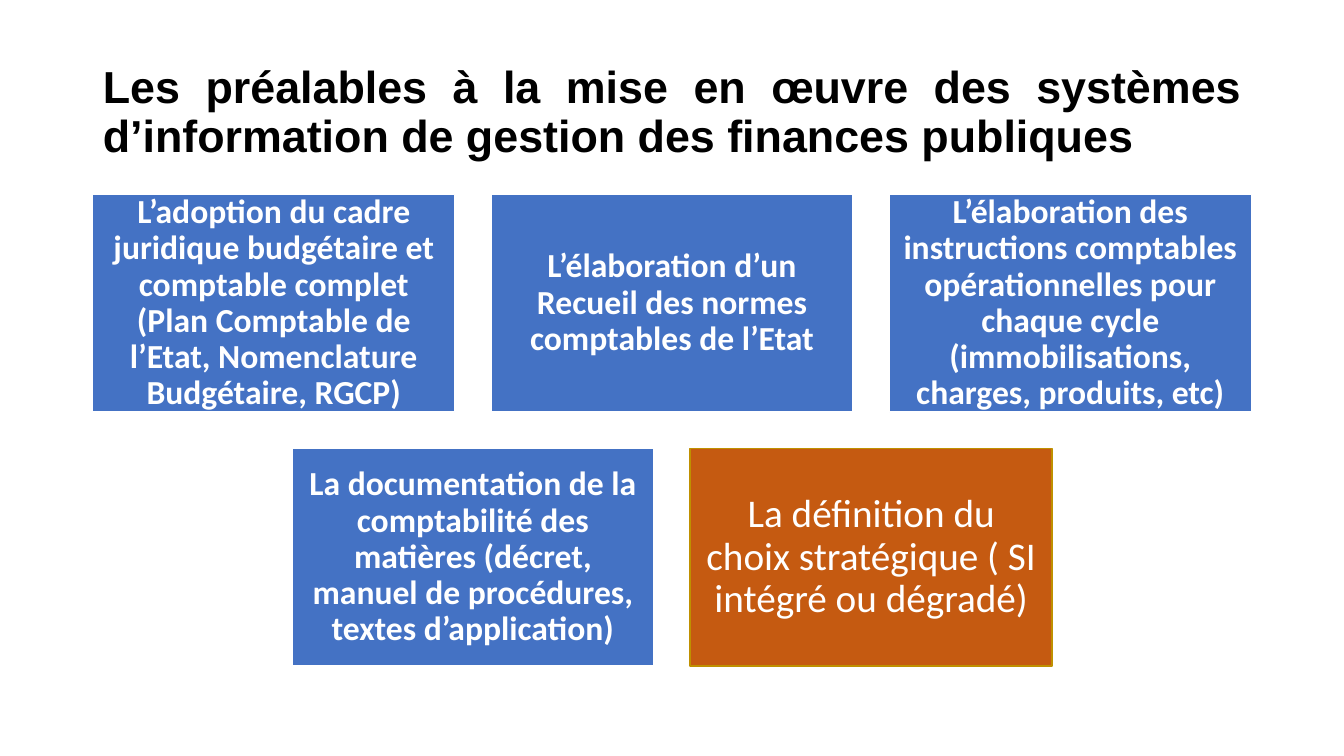
from pptx import Presentation
from pptx.dml.color import RGBColor
from pptx.enum.shapes import MSO_SHAPE as Shape
from pptx.enum.text import MSO_ANCHOR as Anchor, MSO_AUTO_SIZE as AutoSize, PP_ALIGN as Align
from pptx.util import Inches, Pt

BLACK = RGBColor(0x00, 0x00, 0x00)
WHITE = RGBColor(0xFF, 0xFF, 0xFF)
BLUE = RGBColor(0x44, 0x72, 0xC4)
ORANGE = RGBColor(0xC5, 0x5A, 0x11)
GOLD = RGBColor(0xBF, 0x90, 0x00)

SLIDE_WIDTH, SLIDE_HEIGHT = 13.33, 7.5
BOX_WIDTH, BOX_HEIGHT, GAP = 3.59, 2.16, 0.36
FIRST_ROW_TOP = 1.93

TITLE = ("Les préalables à la mise en œuvre des systèmes "
         "d’information de gestion des finances publiques")

STEP = dict(fill=BLUE, line=WHITE, inset=0.1, size=24, bold=True)
CHOICE = dict(fill=ORANGE, line=GOLD, inset=0.12, size=28, bold=False)

ROWS = [
    [("L’adoption du cadre juridique budgétaire et comptable complet "
      "(Plan Comptable de l’Etat, Nomenclature Budgétaire, RGCP)", STEP),
     ("L’élaboration d’un Recueil des normes comptables de l’Etat", STEP),
     ("L’élaboration des instructions comptables opérationnelles pour chaque cycle "
      "(immobilisations, charges, produits, etc)", STEP)],
    [("La documentation de la comptabilité des matières "
      "(décret, manuel de procédures, textes d’application)", STEP),
     ("La définition du choix stratégique ( SI intégré ou dégradé)", CHOICE)],
]


def set_all(target, values):
    for name, value in values.items():
        setattr(target, name, value)


def place(shape, left, top, width, height):
    set_all(shape, dict(left=Inches(left), top=Inches(top),
                        width=Inches(width), height=Inches(height)))


def write(shape, text, align, color, inset, **font):
    """Put one formatted paragraph in the shape, centred vertically."""
    frame = shape.text_frame
    set_all(frame, dict(word_wrap=True, auto_size=AutoSize.NONE,
                        vertical_anchor=Anchor.MIDDLE))
    if inset is not None:
        sides = ("margin_left", "margin_top", "margin_right", "margin_bottom")
        set_all(frame, dict.fromkeys(sides, Inches(inset)))
    para = frame.paragraphs[0]
    set_all(para, dict(alignment=align, line_spacing=0.9))
    span = para.add_run()
    span.text = text
    set_all(span.font, font)
    span.font.color.rgb = color


def add_title(page):
    title = page.shapes.title
    place(title, 0.92, 0.4, 11.5, 1.45)
    write(title, TITLE, Align.JUSTIFY, BLACK, None,
          name="Arial", size=Pt(32), bold=True)


def add_box(page, left, top, text, style):
    box = page.shapes.add_shape(Shape.RECTANGLE, Inches(left), Inches(top),
                                Inches(BOX_WIDTH), Inches(BOX_HEIGHT))
    box.shadow.inherit = False
    box.fill.solid()
    box.fill.fore_color.rgb = style["fill"]
    box.line.color.rgb = style["line"]
    box.line.width = Pt(1)
    write(box, text, Align.CENTER, WHITE, style["inset"],
          name="Calibri", size=Pt(style["size"]), bold=style["bold"])


def add_row(page, row_number, boxes):
    """Centre a row of equal boxes across the slide."""
    row_width = len(boxes) * (BOX_WIDTH + GAP) - GAP
    first_left = (SLIDE_WIDTH - row_width) / 2
    top = FIRST_ROW_TOP + row_number * (BOX_HEIGHT + GAP)
    for column, (text, style) in enumerate(boxes):
        add_box(page, first_left + column * (BOX_WIDTH + GAP), top, text, style)


def main():
    deck = Presentation()
    set_all(deck, dict(slide_width=Inches(SLIDE_WIDTH),
                       slide_height=Inches(SLIDE_HEIGHT)))
    page = deck.slides.add_slide(deck.slide_layouts.get_by_name("Title Only"))
    add_title(page)
    for row_number, boxes in enumerate(ROWS):
        add_row(page, row_number, boxes)
    deck.save("out.pptx")


if __name__ == "__main__":
    main()
